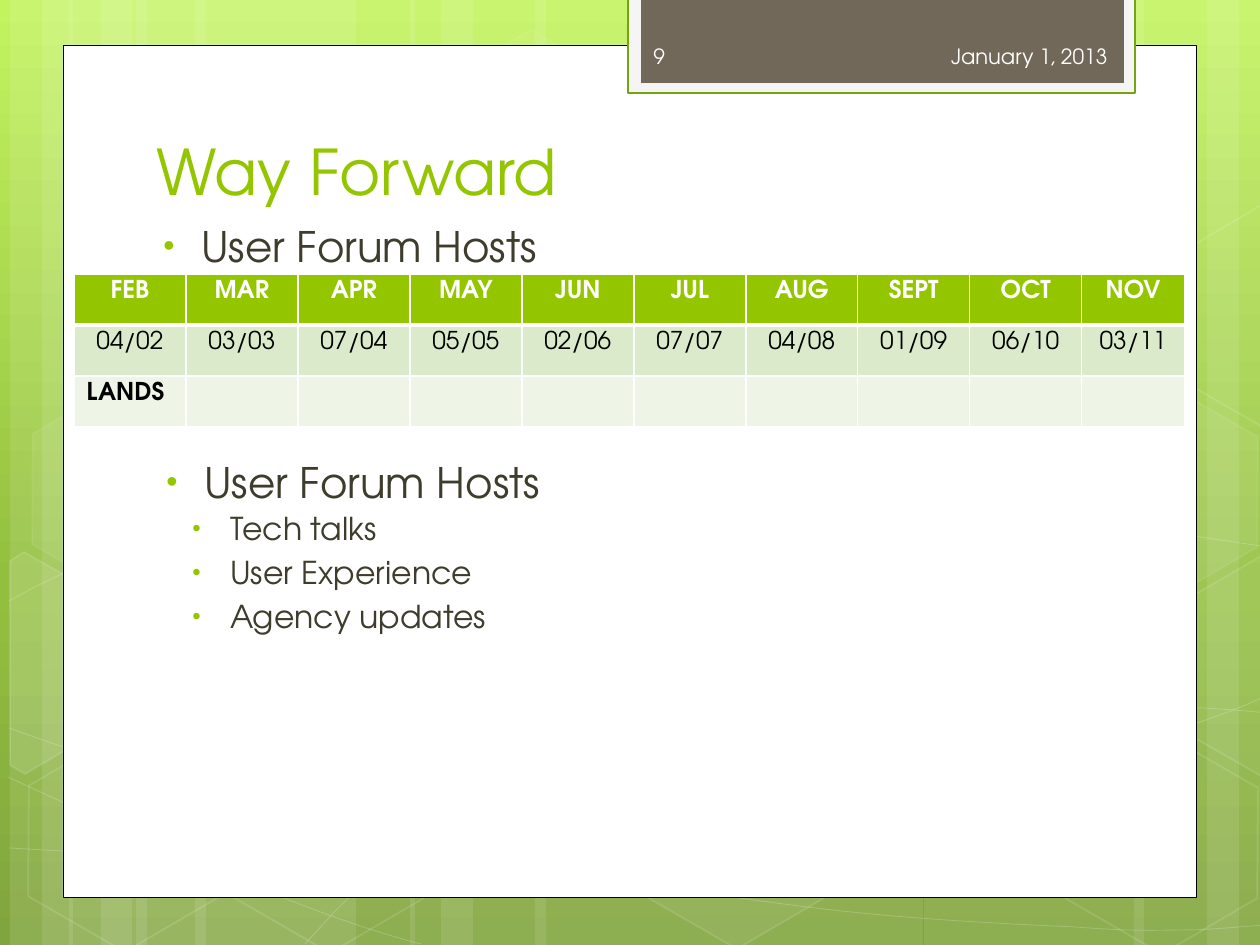
from copy import deepcopy
from pptx import Presentation
from pptx.dml.color import RGBColor
from pptx.enum.shapes import MSO_SHAPE
from pptx.enum.text import MSO_ANCHOR, PP_ALIGN
from pptx.oxml.ns import qn
from pptx.util import Pt
from lxml.etree import SubElement

SCALE = 914400 / 126
FONT = "TeX Gyre Adventor"
GREEN, DARK, WHITE, PALE = "94C600", "3E3D2D", "FFFFFF", "FEFEFE"

BACKDROP = [(0, "C3F35F"), (0.62, "93BF3F"), (1, "81A53E")]
STRIPES = [(136, 220), (10, 63), (42, 105), (195, 220), (69, 63), (101, 105),
           (924, 220), (1207, 63), (1134, 105), (535, 388), (410, 63), (441, 105)]
CURVES = [
    [[(9, 848)], [(77, 852), (145, 856), (239, 854)], [(334, 853), (451, 850), (577, 838)],
     [(703, 825), (882, 801), (998, 777)], [(1113, 753), (1231, 715), (1269, 694)]],
    [[(9, 601)], [(45, 581), (82, 562), (152, 543)], [(224, 524), (326, 496), (437, 488)],
     [(549, 480), (685, 478), (824, 488)], [(963, 498), (1193, 537), (1269, 547)]],
    [[(8, 777)], [(160, 847), (311, 916), (421, 944)]],
    [[(9, 728)], [(48, 742), (88, 756), (161, 776)], [(234, 795), (344, 827), (450, 848)],
     [(554, 869), (687, 892), (791, 905)], [(896, 919), (1008, 924), (1075, 927)],
     [(1140, 932), (1158, 930), (1191, 930)], [(1223, 929), (1246, 926), (1269, 925)]],
    [[(305, 944)], [(328, 919), (350, 893), (381, 871)], [(412, 848), (454, 823), (489, 805)],
     [(524, 788), (546, 780), (592, 767)], [(638, 754), (722, 737), (766, 728)],
     [(811, 719), (818, 719), (857, 717)], [(895, 713), (958, 709), (1000, 708)],
     [(1045, 707), (1116, 708), (1116, 708)], [(1201, 708)],
     [(1223, 709), (1245, 711), (1256, 712)], [(1264, 713), (1264, 712), (1268, 713)]],
]
HEXAGONS = [(421, 45, 4, 8), (626, 742, 6, 12), (14, 745, 0, 12), (18, 393, 7, 8),
            (219, 746, 0, 12), (949, 571, 10, 12), (1051, 747, 0, 12), (1051, 396, 7, 8)]
CUT_HEXAGONS = [
    ([(10, 561), (24, 552), (121, 607), (120, 718), (25, 774), (10, 765)], 10),
    ([(1167, 611), (1261, 556), (1271, 562), (1271, 772), (1263, 777), (1167, 722)], 4),
    ([(1167, 261), (1261, 205), (1273, 212), (1271, 422), (1263, 427), (1167, 372)], 0),
]
PANELS = [((63, 45, 1134, 853), WHITE, "000000", 0.5),
          ((628, -3, 507, 96), "F5F5F5", "74A510", 1.25),
          ((641, -3, 483, 86), "71685A", None, 0)]
LABELS = [
    ((144, 141, 968, 73), "Way Forward", 36, GREEN, MSO_ANCHOR.BOTTOM, PP_ALIGN.LEFT),
    ((826, 31, 294, 50), "January 1, 2013", 12, PALE, MSO_ANCHOR.MIDDLE, PP_ALIGN.RIGHT),
    ((641, 31, 184, 50), "9", 12, PALE, MSO_ANCHOR.MIDDLE, PP_ALIGN.LEFT),
]
BULLETS = [
    ((141, 214, 934, 69), ["User Forum Hosts"], 24, 48, 0),
    ((130, 503, 934, 179), ["Tech talks", "User Experience", "Agency updates"], 18, 88, 1),
    ((144, 450, 934, 69), ["User Forum Hosts"], 24, 48, 0),
]
MONTHS = ["FEB", "MAR", "APR", "MAY", "JUN", "JUL", "AUG", "SEPT", "OCT", "NOV"]
DATES = ["04/02", "03/03", "07/04", "05/05", "02/06", "07/07", "04/08", "01/09", "06/10", "03/11"]
HOSTS = ["LANDS"] + [""] * 9
SCHEDULE = [(MONTHS, GREEN, WHITE, True, PP_ALIGN.CENTER, 3),
            (DATES, "DCEACC", "000000", False, PP_ALIGN.CENTER, 1),
            (HOSTS, "EEF5E7", "000000", True, PP_ALIGN.LEFT, 1)]
COLUMN_WIDTHS = [112] * 9 + [103]
ROW_HEIGHT = 51


def emu(px):
    return round(px * SCALE)


def box(bounds):
    return [emu(px) for px in bounds]


def rgb(value):
    return RGBColor.from_string(value)


def set_alpha(fill_holder, percent):
    color = fill_holder.find(qn("a:solidFill"))[0]
    SubElement(color, qn("a:alpha"), val=str(percent * 1000))


def paint(shape, fill=None, fill_alpha=100, line=None, width=0, line_alpha=100):
    shape.shadow.inherit = False
    if fill and fill_alpha:
        shape.fill.solid()
        shape.fill.fore_color.rgb = rgb(fill)
        if fill_alpha < 100:
            set_alpha(shape._element.spPr, fill_alpha)
    else:
        shape.fill.background()
    if line:
        shape.line.color.rgb = rgb(line)
        shape.line.width = Pt(width)
        if line_alpha < 100:
            set_alpha(shape.line._get_or_add_ln(), line_alpha)
    else:
        shape.line.fill.background()


def outline(points, close):
    builder = shapes.build_freeform(*points[0], scale=SCALE)
    builder.add_line_segments(points[1:], close=close)
    return builder.convert_to_shape()


def curve(segments):
    shape = outline([point for segment in segments for point in segment], False)
    strokes = iter(shape._element.findall(".//" + qn("a:lnTo")))
    for segment in segments[1:]:
        parts = [next(strokes) for _ in segment]
        if len(parts) == 3:
            bezier = parts[0].makeelement(qn("a:cubicBezTo"))
            parts[0].addprevious(bezier)
            for part in parts:
                bezier.append(part[0])
                part.getparent().remove(part)
    return shape


def style(paragraph, size, color, bold=False):
    for run in paragraph.runs:
        run.font.name, run.font.size, run.font.bold = FONT, Pt(size), bold
        run.font.color.rgb = rgb(color)


def text_frame(bounds, anchor):
    frame = shapes.add_textbox(*box(bounds)).text_frame
    frame.word_wrap = True
    frame.vertical_anchor = anchor
    return frame


def add_bullet(paragraph, indent, level):
    paragraph.level = level
    props = paragraph._p.get_or_add_pPr()
    props.set("marL", str(emu(indent)))
    props.set("indent", str(emu(-38)))
    SubElement(SubElement(props, qn("a:buClr")), qn("a:srgbClr"), val=GREEN)
    SubElement(props, qn("a:buSzPct"), val="76000")
    SubElement(props, qn("a:buFont"), typeface="Arial")
    SubElement(props, qn("a:buChar"), char="•")


def add_borders(cell, bottom_width):
    props = cell._tc.get_or_add_tcPr()
    for position, side in enumerate(("lnL", "lnR", "lnT", "lnB")):
        width = bottom_width if side == "lnB" else 1
        border = props.makeelement(qn("a:" + side), {"w": str(Pt(width))})
        SubElement(SubElement(border, qn("a:solidFill")), qn("a:srgbClr"), val=WHITE)
        props.insert(position, border)


deck = Presentation()
deck.slide_width, deck.slide_height = emu(1260), emu(945)
slide = deck.slides.add_slide(deck.slide_layouts[6])
shapes = slide.shapes

backdrop = slide.background.fill
backdrop.gradient()
backdrop.gradient_angle = 270
stop_list = slide._element.find(".//" + qn("a:gsLst"))
stop_list.append(deepcopy(stop_list[-1]))
for stop, (position, color) in zip(backdrop.gradient_stops, BACKDROP):
    stop.position = position
    stop.color.rgb = rgb(color)

for left, width in STRIPES:
    paint(shapes.add_shape(MSO_SHAPE.RECTANGLE, *box((left, 0, width, 945))), WHITE, 10)
for segments in CURVES:
    paint(curve(segments), line=WHITE, width=0.5, line_alpha=20)
for left, top, fill_alpha, line_alpha in HEXAGONS:
    hexagon = shapes.add_shape(MSO_SHAPE.HEXAGON, *box((left, top, 221, 192)))
    hexagon.adjustments[0], hexagon.adjustments[1] = 0.285, 1.155
    hexagon.rotation = 30
    paint(hexagon, WHITE, fill_alpha, WHITE, 1, line_alpha)
for corners, fill_alpha in CUT_HEXAGONS:
    paint(outline(corners, True), WHITE, fill_alpha, WHITE, 1, 12)
for bounds, fill, line, width in PANELS:
    paint(shapes.add_shape(MSO_SHAPE.RECTANGLE, *box(bounds)), fill, 100, line, width)

for bounds, label, size, color, anchor, align in LABELS:
    frame = text_frame(bounds, anchor)
    frame.text = label
    frame.paragraphs[0].alignment = align
    style(frame.paragraphs[0], size, color)

for bounds, items, size, indent, level in BULLETS:
    frame = text_frame(bounds, MSO_ANCHOR.TOP)
    frame.text = "\n".join(items)
    for index, paragraph in enumerate(frame.paragraphs):
        add_bullet(paragraph, indent, level)
        if index:
            paragraph.space_before = Pt(size * 0.2)
        style(paragraph, size, DARK)

table_bounds = (74, 274, sum(COLUMN_WIDTHS), ROW_HEIGHT * len(SCHEDULE))
table = shapes.add_table(len(SCHEDULE), len(MONTHS), *box(table_bounds)).table
for column, width in zip(table.columns, COLUMN_WIDTHS):
    column.width = emu(width)
for row, (entries, fill, color, bold, align, bottom_width) in zip(table.rows, SCHEDULE):
    row.height = emu(ROW_HEIGHT)
    for cell, entry in zip(row.cells, entries):
        cell.fill.solid()
        cell.fill.fore_color.rgb = rgb(fill)
        add_borders(cell, bottom_width)
        cell.text = entry
        paragraph = cell.text_frame.paragraphs[0]
        paragraph.alignment = align
        style(paragraph, 14, color, bold)

deck.save("out.pptx")
